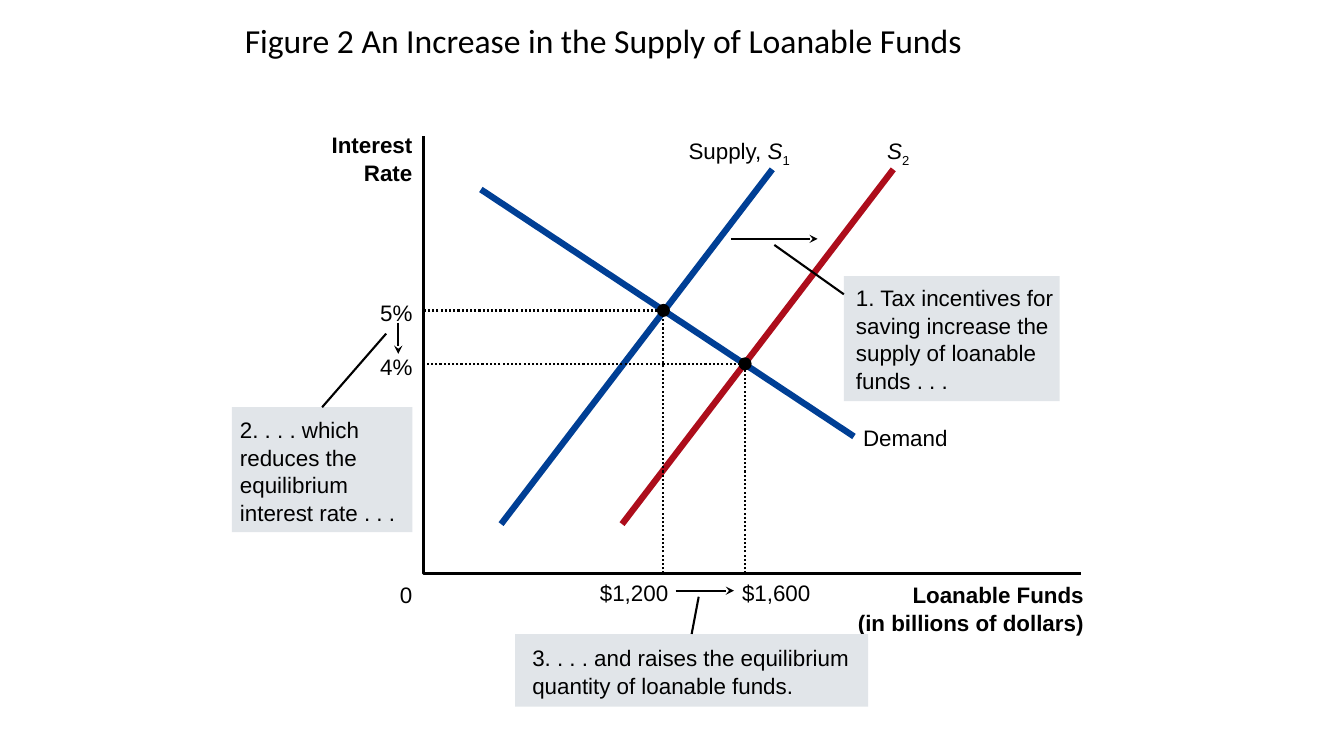
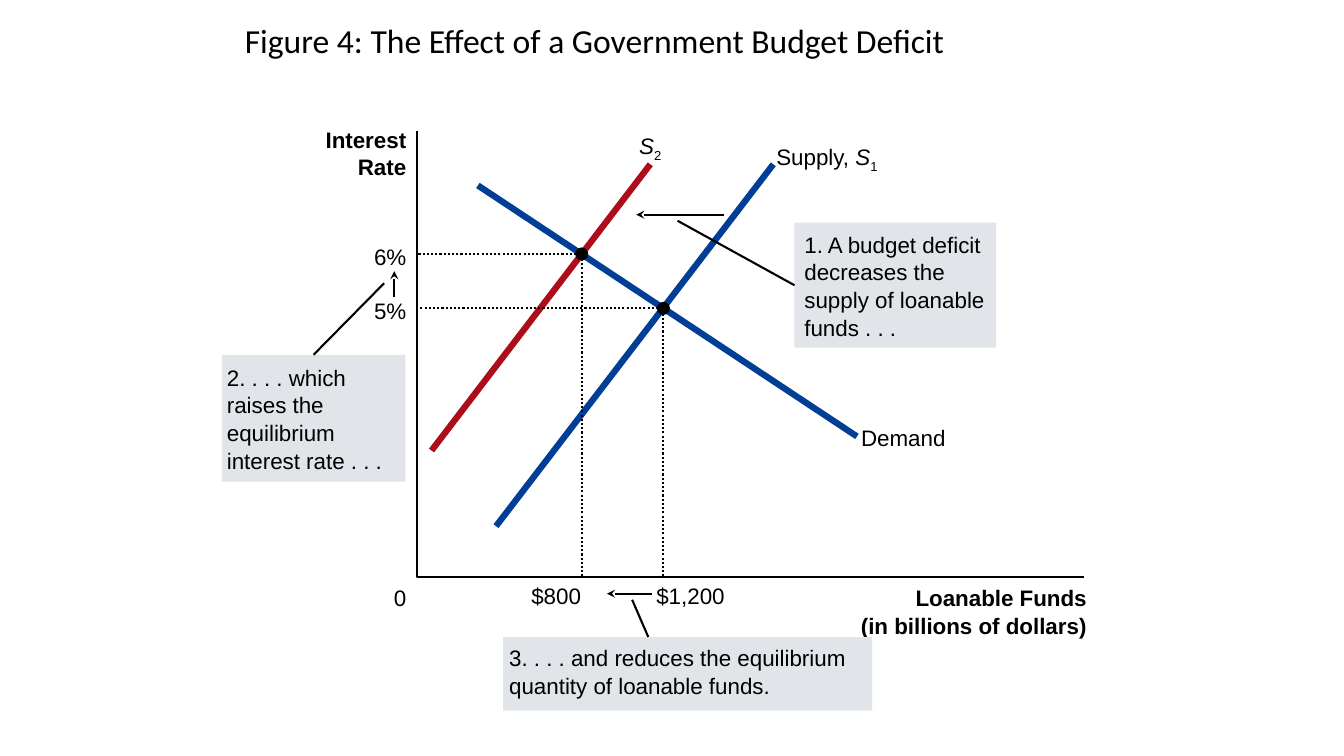
import dataclasses

import lxml.etree
import pptx
import pptx.dml.color
import pptx.enum.dml
import pptx.enum.shapes
import pptx.enum.text
import pptx.oxml.ns
import pptx.util

Inches = pptx.util.Inches
Pt = pptx.util.Pt
LEFT = pptx.enum.text.PP_ALIGN.LEFT
RIGHT = pptx.enum.text.PP_ALIGN.RIGHT
TOP_SIDE, LEFT_SIDE = 0, 1


@dataclasses.dataclass(frozen=True)
class Theme:
    ink: str = "000000"
    blue: str = "003F95"
    red: str = "AD0D1B"
    panel: str = "E1E5E9"
    title_font: str = "Calibri"
    body_font: str = "Arial"
    title_size: float = 24
    body_size: float = 16
    leading: float = 19.8
    thin: float = 1.5
    thick: float = 4.5
    label_height: float = 0.28
    axis_gap: float = 0.11
    dot: float = 0.13


THEME = Theme()


@dataclasses.dataclass(frozen=True)
class Plot:
    slide: object
    left: float
    top: float
    width: float
    height: float

    def at(self, x, y):
        return Inches(self.left + x), Inches(self.top + self.height - y)


@dataclasses.dataclass(frozen=True)
class Curve:
    start: tuple
    end: tuple
    color: str
    label: tuple
    label_at: tuple
    label_width: float


@dataclasses.dataclass(frozen=True)
class Equilibrium:
    point: tuple
    rate: str
    quantity: str
    quantity_left: float


@dataclasses.dataclass(frozen=True)
class Callout:
    corner: tuple
    size: tuple
    inset: tuple
    text: str
    tip: tuple
    side: int = None
    base: tuple = None


def rgb(color):
    return pptx.dml.color.RGBColor.from_string(color)


def style_line(line, color=THEME.ink, width=THEME.thin):
    line.color.rgb = rgb(color)
    line.width = Pt(width)


def write(frame, runs, align=LEFT, bold=False, inset=(0, 0)):
    frame.word_wrap = True
    frame.margin_left, frame.margin_top = Inches(inset[0]), Inches(inset[1])
    frame.margin_right = frame.margin_bottom = 0
    frame.vertical_anchor = pptx.enum.text.MSO_ANCHOR.TOP
    paragraph = frame.paragraphs[0]
    paragraph.alignment = align
    paragraph.line_spacing = Pt(THEME.leading)
    font = paragraph.font
    font.name, font.size, font.bold = THEME.body_font, Pt(THEME.body_size), bold
    font.color.rgb = rgb(THEME.ink)
    for text, role in runs:
        for index, line in enumerate(text.split("\n")):
            if index:
                paragraph.add_line_break()
            run = paragraph.add_run()
            run.text = line
            if role == "symbol":
                run.font.italic = True
            elif role == "subscript":
                run._r.get_or_add_rPr().set("baseline", "-25000")


def add_label(plot, runs, x, y, width, align=LEFT, bold=False, lines=1):
    if align == RIGHT:
        x -= width
    box = plot.slide.shapes.add_textbox(
        *plot.at(x, y), Inches(width), Inches(THEME.label_height * lines))
    write(box.text_frame, runs, align, bold)


def add_line(plot, start, end, color=THEME.ink, width=THEME.thin, arrow=False):
    line = plot.slide.shapes.add_connector(
        pptx.enum.shapes.MSO_CONNECTOR.STRAIGHT, *plot.at(*start), *plot.at(*end))
    style_line(line.line, color, width)
    if arrow:
        lxml.etree.SubElement(
            line.line._get_or_add_ln(), pptx.oxml.ns.qn("a:tailEnd"), type="stealth")
    lxml.etree.SubElement(line._element.spPr, pptx.oxml.ns.qn("a:effectLst"))
    return line


def add_corner_line(plot, points, dotted=False):
    builder = plot.slide.shapes.build_freeform(*plot.at(*points[0]))
    builder.add_line_segments([plot.at(*point) for point in points[1:]], close=False)
    outline = builder.convert_to_shape()
    outline.shadow.inherit = False
    outline.fill.background()
    style_line(outline.line)
    if dotted:
        outline.line.dash_style = pptx.enum.dml.MSO_LINE.ROUND_DOT


def add_solid(plot, kind, corner, size, color):
    solid = plot.slide.shapes.add_shape(
        kind, *plot.at(*corner), Inches(size[0]), Inches(size[1]))
    solid.shadow.inherit = False
    solid.fill.solid()
    solid.fill.fore_color.rgb = rgb(color)
    solid.line.fill.background()
    return solid


def add_title(slide, text):
    title = slide.shapes.add_textbox(Inches(2.33), Inches(0.06), Inches(9), Inches(0.75))
    frame = title.text_frame
    frame.word_wrap = True
    frame.vertical_anchor = pptx.enum.text.MSO_ANCHOR.MIDDLE
    paragraph = frame.paragraphs[0]
    paragraph.text = text
    paragraph.line_spacing = 0.8
    paragraph.font.name = THEME.title_font
    paragraph.font.size = Pt(THEME.title_size)
    paragraph.font.color.rgb = rgb(THEME.ink)


def add_axes(plot):
    add_corner_line(plot, [(0, plot.height), (0, 0), (plot.width, 0)])
    add_label(plot, [("Interest\nRate", "")], -THEME.axis_gap, plot.height + 0.06,
              1, RIGHT, bold=True, lines=2)
    add_label(plot, [("Loanable Funds\n(in billions of dollars)", "")],
              plot.width + 0.03, -0.07, 2.5, RIGHT, bold=True, lines=2)
    add_label(plot, [("0", "")], -THEME.axis_gap, -0.07, 0.2, RIGHT)


def add_curve(plot, curve):
    add_line(plot, curve.start, curve.end, curve.color, THEME.thick)
    add_label(plot, curve.label, *curve.label_at, curve.label_width)


def add_equilibrium(plot, equilibrium):
    x, y = equilibrium.point
    add_corner_line(plot, [(x, 0), (x, y), (0, y)], dotted=True)
    add_solid(plot, pptx.enum.shapes.MSO_SHAPE.OVAL,
              (x - THEME.dot / 2, y + THEME.dot / 2), (THEME.dot, THEME.dot), THEME.ink)
    add_label(plot, [(equilibrium.rate, "")], -THEME.axis_gap, y + 0.12, 0.5, RIGHT)
    add_label(plot, [(equilibrium.quantity, "")], equilibrium.quantity_left, -0.05, 0.8)


def add_callout(plot, callout):
    panel = add_solid(plot, pptx.enum.shapes.MSO_SHAPE.RECTANGLE,
                      callout.corner, callout.size, THEME.panel)
    write(panel.text_frame, [(callout.text, "")], inset=callout.inset)
    leader = add_line(plot, callout.tip, callout.base or callout.corner)
    if callout.side is not None:
        leader.end_connect(panel, callout.side)


def add_figure(deck, title, box, curves, equilibria, arrows, callouts):
    slide = deck.slides.add_slide(deck.slide_layouts[6])
    plot = Plot(slide, *box)
    add_title(slide, title)
    add_axes(plot)
    for curve in curves:
        add_curve(plot, curve)
    for equilibrium in equilibria:
        add_equilibrium(plot, equilibrium)
    for start, end in arrows:
        add_line(plot, start, end, arrow=True)
    for callout in callouts:
        add_callout(plot, callout)


SUPPLY_1 = (("Supply, ", ""), ("S", "symbol"), ("1", "subscript"))
SUPPLY_2 = (("S", "symbol"), ("2", "subscript"))
DEMAND = (("Demand", ""),)

FIGURES = [
    dict(
        title="Figure 2 An Increase in the Supply of Loanable Funds",
        box=(4.2, 1.35, 6.52, 4.34),
        curves=[
            Curve((0.77, 0.49), (3.46, 4.01), THEME.blue, SUPPLY_1, (2.63, 4.3), 1.2),
            Curve((1.97, 0.49), (4.66, 4.01), THEME.red, SUPPLY_2, (4.6, 4.3), 0.4),
            Curve((0.57, 3.81), (4.27, 1.36), THEME.blue, DEMAND, (4.36, 1.49), 1),
        ],
        equilibria=[
            Equilibrium((2.38, 2.61), "5%", "$1,200", 1.75),
            Equilibrium((3.19, 2.08), "4%", "$1,600", 3.16),
        ],
        arrows=[
            ((3.05, 3.32), (3.91, 3.32)),
            ((-0.25, 2.49), (-0.25, 2.18)),
            ((2.5, -0.17), (3.08, -0.17)),
        ],
        callouts=[
            Callout((4.17, 2.95), (2.14, 1.24), (0.12, 0.07),
                    "1. Tax incentives for\nsaving increase the\nsupply of loanable\nfunds . . .",
                    (3.48, 3.26), base=(4.17, 2.77)),
            Callout((-1.9, 1.65), (1.79, 1.24), (0.08, 0.08),
                    "2. . . . which\nreduces the\nequilibrium\ninterest rate . . .",
                    (-0.37, 2.38), TOP_SIDE),
            Callout((0.91, -0.6), (3.5, 0.72), (0.17, 0.09),
                    "3. . . . and raises the equilibrium\nquantity of loanable funds.",
                    (2.73, -0.23), TOP_SIDE),
        ],
    ),
    dict(
        title="Figure 4: The Effect of a Government Budget Deficit",
        box=(4.14, 1.3, 6.61, 4.42),
        curves=[
            Curve((0.14, 1.25), (2.31, 4.09), THEME.red, SUPPLY_2, (2.2, 4.38), 0.4),
            Curve((0.78, 0.5), (3.53, 4.09), THEME.blue, SUPPLY_1, (3.56, 4.27), 1.2),
            Curve((0.6, 3.88), (4.36, 1.39), THEME.blue, DEMAND, (4.4, 1.52), 1),
        ],
        equilibria=[
            Equilibrium((2.44, 2.66), "5%", "$1,200", 2.37),
            Equilibrium((1.63, 3.2), "6%", "$800", 1.13),
        ],
        arrows=[
            ((3.04, 3.59), (2.17, 3.59)),
            ((-0.23, 2.77), (-0.23, 3.03)),
            ((2.33, -0.17), (1.88, -0.17)),
        ],
        callouts=[
            Callout((3.74, 3.51), (2, 1.24), (0.1, 0.07),
                    "1. A budget deficit\ndecreases the\nsupply of loanable\nfunds . . .",
                    (2.58, 3.53), LEFT_SIDE),
            Callout((-1.94, 2.2), (1.82, 1.26), (0.05, 0.08),
                    "2. . . . which\nraises the\nequilibrium\ninterest rate . . .",
                    (-0.33, 2.91), TOP_SIDE),
            Callout((0.85, -0.6), (3.66, 0.73), (0.06, 0.06),
                    "3. . . . and reduces the equilibrium\nquantity of loanable funds.",
                    (2.13, -0.23), base=(2.29, -0.6)),
        ],
    ),
]


def main():
    deck = pptx.Presentation()
    deck.slide_width, deck.slide_height = Inches(13.33), Inches(7.5)
    for figure in FIGURES:
        add_figure(deck, **figure)
    deck.save("out.pptx")


if __name__ == "__main__":
    main()
